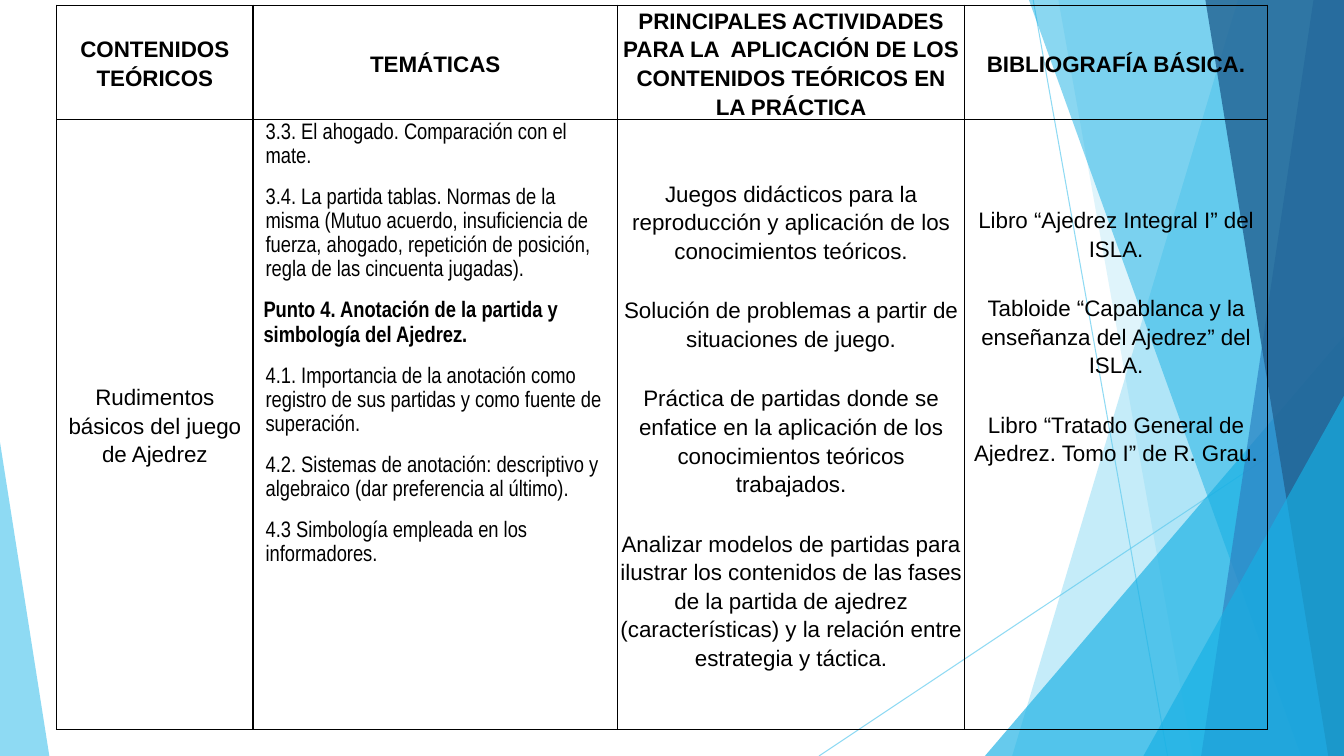
import lxml.etree
import pptx
import pptx.dml.color
import pptx.enum.shapes
import pptx.enum.text
import pptx.oxml.ns
import pptx.util
from dataclasses import dataclass

PX = 9525
WIDTH, HEIGHT = 1280, 720
qn = pptx.oxml.ns.qn


@dataclass(frozen=True)
class Theme:
    sky: str = "5FCBEF"
    cyan: str = "17B0E4"
    blue: str = "2E83C3"
    navy: str = "226292"
    black: str = "000000"
    font: str = "Arial"
    narrow_font: str = "Arial Narrow"
    text_size: int = 16
    line_width: float = 0.75
    border_width: int = 1


THEME = Theme()

HEADINGS = [
    "CONTENIDOS TEÓRICOS",
    "TEMÁTICAS",
    "PRINCIPALES ACTIVIDADES PARA LA  APLICACIÓN DE LOS CONTENIDOS TEÓRICOS EN LA PRÁCTICA",
    "BIBLIOGRAFÍA BÁSICA.",
]
CONTENTS = ["Rudimentos básicos del juego de Ajedrez"]
TOPIC_HEADING = "Punto 4. Anotación de la partida y simbología del Ajedrez."
TOPICS = [
    "3.3. El ahogado. Comparación con el mate.",
    "3.4. La partida tablas. Normas de la misma (Mutuo acuerdo, insuficiencia de fuerza, "
    "ahogado, repetición de posición, regla de las cincuenta jugadas).",
    TOPIC_HEADING,
    "4.1. Importancia de la anotación como registro de sus partidas y como fuente de superación.",
    "4.2. Sistemas de anotación: descriptivo y algebraico (dar preferencia al último).",
    "4.3 Simbología empleada en los informadores.",
]
ACTIVITIES = [
    "Juegos didácticos para la reproducción y aplicación de los conocimientos teóricos.",
    "Solución de problemas a partir de situaciones de juego.",
    "Práctica de partidas donde se enfatice en la aplicación de los conocimientos teóricos trabajados.",
    "Analizar modelos de partidas para ilustrar los contenidos de las fases de la partida de "
    "ajedrez (características) y la relación entre estrategia y táctica.",
]
BIBLIOGRAPHY = [
    "Libro “Ajedrez Integral I” del ISLA.",
    "Tabloide “Capablanca y la enseñanza del Ajedrez” del ISLA.",
    "Libro “Tratado General de Ajedrez. Tomo I” de R. Grau.",
]


def px(*lengths):
    return [length * PX for length in lengths]


def rgb(color):
    return pptx.dml.color.RGBColor.from_string(color)


def set_opacity(shape, percent):
    color = shape.element.spPr.find(".//" + qn("a:srgbClr"))
    lxml.etree.SubElement(color, qn("a:alpha"), val=str(percent * 1000))


def paint(shape, color, opacity):
    shape.shadow.inherit = False
    shape.fill.solid()
    shape.fill.fore_color.rgb = rgb(color)
    shape.line.fill.background()
    set_opacity(shape, opacity)


def add_ray(slide, *ends):
    ray = slide.shapes.add_connector(pptx.enum.shapes.MSO_CONNECTOR.STRAIGHT, *px(*ends))
    ray.line.color.rgb = rgb(THEME.sky)
    ray.line.width = pptx.util.Pt(THEME.line_width)
    set_opacity(ray, 70)
    lxml.etree.SubElement(ray.element.spPr, qn("a:effectLst"))


def add_panel(slide, top_x, bottom_x, color, opacity):
    builder = slide.shapes.build_freeform(top_x, 0, scale=PX)
    builder.add_line_segments([(WIDTH, 0), (WIDTH, HEIGHT), (bottom_x, HEIGHT)])
    paint(builder.convert_to_shape(), color, opacity)


def add_triangle(slide, left, top, width, peak, color, opacity):
    triangle = slide.shapes.add_shape(
        pptx.enum.shapes.MSO_SHAPE.ISOSCELES_TRIANGLE, *px(left, top, width, HEIGHT - top))
    triangle.adjustments[0] = peak
    paint(triangle, color, opacity)


def style_cell(cell, side=2, bottom=0, middle=True):
    cell.margin_left = cell.margin_right = side * PX
    cell.margin_top, cell.margin_bottom = px(0, bottom)
    anchor = pptx.enum.text.MSO_ANCHOR
    cell.vertical_anchor = anchor.MIDDLE if middle else anchor.TOP
    properties = cell._tc.get_or_add_tcPr()
    for edge in ("a:lnL", "a:lnR", "a:lnT", "a:lnB"):
        border = lxml.etree.SubElement(
            properties, qn(edge), w=str(pptx.util.Pt(THEME.border_width)))
        fill = lxml.etree.SubElement(border, qn("a:solidFill"))
        lxml.etree.SubElement(fill, qn("a:srgbClr"), val=THEME.black)
    cell.fill.background()


def write_paragraphs(cell, texts, font=THEME.font, bold=(), centred=True, before=12, after=10):
    alignment = pptx.enum.text.PP_ALIGN
    for index, text in enumerate(texts):
        frame = cell.text_frame
        paragraph = frame.add_paragraph() if index else frame.paragraphs[0]
        paragraph.alignment = alignment.CENTER if centred else alignment.LEFT
        paragraph.line_spacing = 1.15
        paragraph.space_before = pptx.util.Pt(before)
        paragraph.space_after = pptx.util.Pt(after)
        if not centred and text not in bold:
            paragraph._p.get_or_add_pPr().set("marL", str(2 * PX))
        run = paragraph.add_run()
        run.text = text
        run.font.name = font
        run.font.size = pptx.util.Pt(THEME.text_size)
        run.font.bold = text in bold
        run.font.color.rgb = rgb(THEME.black)


def add_programme_table(slide):
    widths, heights = px(187, 347, 331, 288), px(109, 581)
    table = slide.shapes.add_table(
        2, 4, *px(54, 5), sum(widths), sum(heights)).table
    table.first_row = table.horz_banding = False
    for column, width in zip(table.columns, widths):
        column.width = width
    for row, height in zip(table.rows, heights):
        row.height = height
    for index, heading in enumerate(HEADINGS):
        style_cell(table.cell(0, index))
        write_paragraphs(table.cell(0, index), [heading], bold=HEADINGS)
    contents, topics, activities, bibliography = table.rows[1].cells
    style_cell(contents)
    write_paragraphs(contents, CONTENTS)
    style_cell(topics, side=10, middle=False)
    write_paragraphs(topics, TOPICS, THEME.narrow_font, [TOPIC_HEADING], False, 6, 6)
    style_cell(activities)
    write_paragraphs(activities, ACTIVITIES)
    style_cell(bibliography, bottom=170)
    write_paragraphs(bibliography, BIBLIOGRAPHY)


def add_background(slide):
    add_ray(slide, 984, 0, 1112, HEIGHT)
    add_ray(slide, WIDTH, 387, 780, HEIGHT)
    add_panel(slide, 1179, 964, THEME.sky, 36)
    add_panel(slide, 1008, 1136, THEME.sky, 20)
    add_triangle(slide, 938, 320, 342, 1, THEME.cyan, 66)
    add_panel(slide, 980, 1239, THEME.cyan, 50)
    add_panel(slide, 1251, 1144, THEME.blue, 70)
    add_panel(slide, 1148, 1265, THEME.navy, 80)
    add_triangle(slide, 1089, 377, 191, 1, THEME.cyan, 66)
    add_triangle(slide, 0, 421, 47, 0, THEME.sky, 70)


def main():
    presentation = pptx.Presentation()
    presentation.slide_width, presentation.slide_height = px(WIDTH, HEIGHT)
    slide = presentation.slides.add_slide(presentation.slide_layouts[6])
    add_background(slide)
    add_programme_table(slide)
    presentation.save("out.pptx")


if __name__ == "__main__":
    main()
